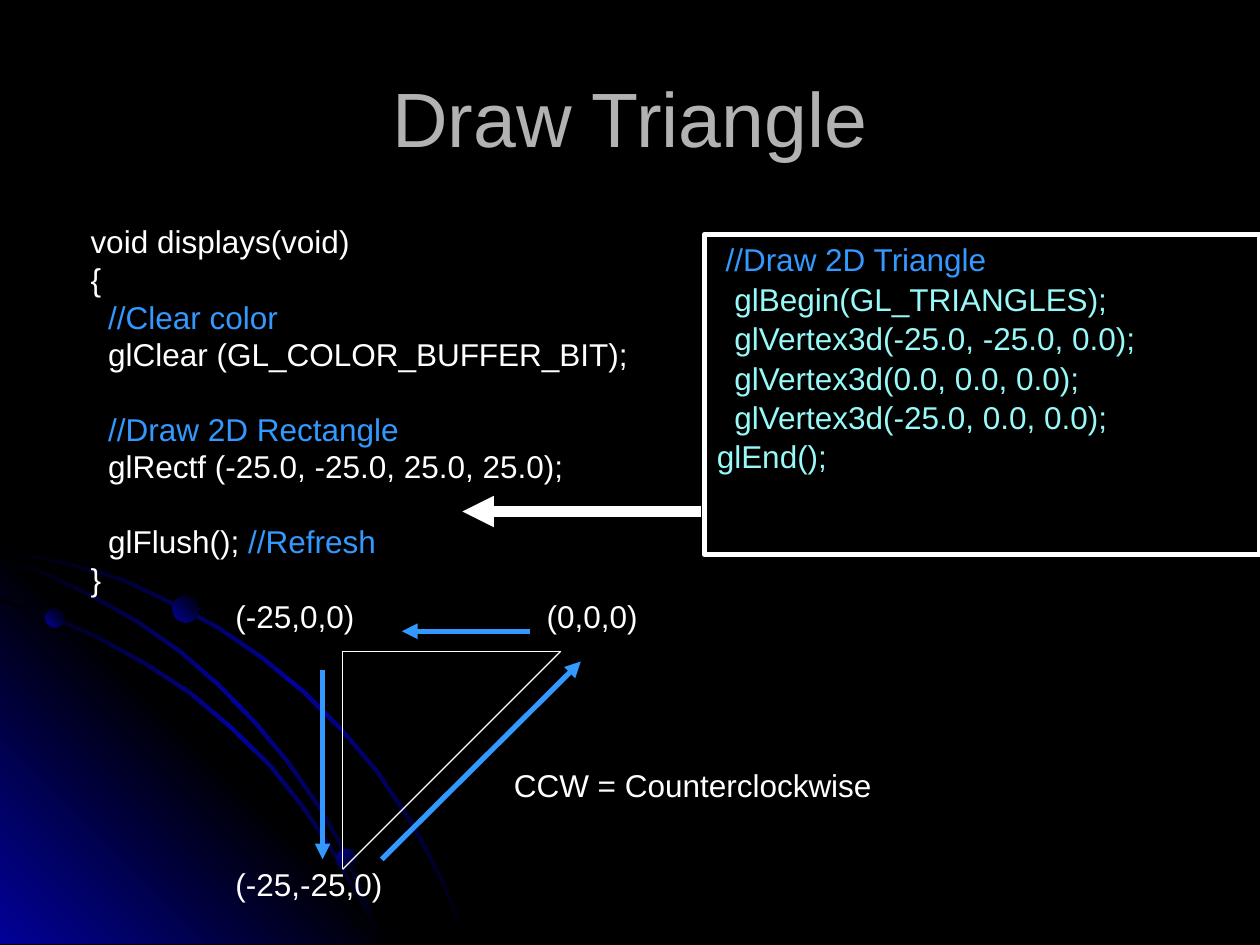
import copy

from lxml import etree
from pptx import Presentation
from pptx import util as u
from pptx.dml.color import RGBColor
from pptx.enum import shapes, text
from pptx.oxml.ns import qn

COLUMNS, ROWS = 100, 75
COLORS = {
    "black": "000000", "navy": "010199", "white": "FFFFFF",
    "title": "B2B2B2", "comment": "3399FF", "code": "97F9F8",
}
GLOW = ("black", "navy", "black")
SPACE_WIDTH = 0.7  # columns taken by one space of 18 pt code


class SlideBuilder:
    def __init__(self, presentation):
        self.unit = presentation.slide_width / COLUMNS
        self.font, self.size = "Arial", 18
        self.slide = presentation.slides.add_slide(presentation.slide_layouts[6])
        self.fill(self.slide.background.fill, "black")

    def grid(self, *lengths):
        return [u.Emu(round(length * self.unit)) for length in lengths]

    def color(self, name):
        return RGBColor.from_string(COLORS[name])

    def fill(self, fill, name):
        fill.solid()
        fill.fore_color.rgb = self.color(name)

    def gradient(self, shape, names, angle):
        """Spread the named colours evenly; the angle runs counterclockwise."""
        shape.shadow.inherit = False
        shape.line.fill.background()
        shape.fill.gradient()
        shape.fill.gradient_angle = angle
        stops = shape._element.spPr.find(qn("a:gradFill")).find(qn("a:gsLst"))
        for _ in names[2:]:
            stops.append(copy.deepcopy(stops[-1]))
        for index, (stop, name) in enumerate(zip(shape.fill.gradient_stops, names)):
            stop.position = index / (len(names) - 1)
            stop.color.rgb = self.color(name)

    def polygon(self, points, names, angle):
        start, *rest = [self.grid(*point) for point in points]
        builder = self.slide.shapes.build_freeform(*start, scale=1.0)
        builder.add_line_segments(rest, close=True)
        self.gradient(builder.convert_to_shape(), names, angle)

    def orbit(self, edge):
        """Draw a thin glowing band along the inner side of an edge."""
        inner = [(max(x - 0.2, 0), min(y + 0.2, ROWS)) for x, y in reversed(edge)]
        self.polygon(edge + inner, GLOW, 315)

    def planet(self, left, top, diameter, angle):
        shape = self.slide.shapes.add_shape(
            shapes.MSO_SHAPE.OVAL, *self.grid(left, top, diameter, diameter))
        self.gradient(shape, ("navy", "black"), angle)

    def set_lines(self, frame, lines, size=None, align=text.PP_ALIGN.LEFT,
                  spacing=1.0, before=0, gap=0):
        """Set lines of (spaces of indent, gap above, runs)."""
        frame.word_wrap = True
        for index, (indent, has_gap, runs) in enumerate(lines):
            paragraph = frame.add_paragraph() if index else frame.paragraphs[0]
            paragraph.alignment = align
            paragraph.line_spacing = spacing
            paragraph.space_before = u.Pt(before + gap * has_gap)
            paragraph.font.name = self.font
            paragraph.font.size = u.Pt(size or self.size)
            paragraph._p.get_or_add_pPr().set(
                "marL", str(int(self.grid(indent * SPACE_WIDTH)[0])))
            for content, color in runs:
                run = paragraph.add_run()
                run.text = content
                run.font.color.rgb = self.color(color)

    def text_box(self, box, lines, anchor=text.MSO_ANCHOR.TOP, **style):
        frame = self.slide.shapes.add_textbox(*self.grid(*box)).text_frame
        frame.vertical_anchor = anchor
        self.set_lines(frame, lines, **style)

    def label(self, left, top, width, content):
        self.text_box((left, top, width, 5), [(0, False, [(content, "white")])])

    def code_panel(self, box, lines, **style):
        shape = self.slide.shapes.add_shape(
            shapes.MSO_SHAPE.RECTANGLE, *self.grid(*box))
        shape.shadow.inherit = False
        shape.fill.background()
        shape.line.color.rgb = self.color("white")
        shape.line.width = u.Pt(3)
        shape.text_frame.vertical_anchor = text.MSO_ANCHOR.TOP
        self.set_lines(shape.text_frame, lines, **style)

    def line(self, start, end, color, width, arrow=False):
        connector = self.slide.shapes.add_connector(
            shapes.MSO_CONNECTOR.STRAIGHT, *self.grid(*start, *end))
        connector.line.color.rgb = self.color(color)
        connector.line.width = u.Pt(width)
        properties = connector._element.spPr
        if arrow:
            etree.SubElement(properties.find(qn("a:ln")),
                             qn("a:tailEnd"), type="triangle")
        etree.SubElement(properties, qn("a:effectLst"))


ORBITS = [
    [(0, 43.5), (5.7, 44.7), (9.8, 45.9), (13.6, 47.7), (17.4, 49.7),
     (20.9, 52.1), (24.2, 54.8), (27.2, 57.8), (30, 61.1), (32.5, 64.8),
     (33.9, 67.3), (35.2, 69.8), (36.2, 72.3), (37.2, 74.9)],
    [(0, 47.5), (4.1, 48.8), (7.9, 50.5), (11.7, 52.6), (15.2, 54.9),
     (18.4, 57.6), (21.5, 60.6), (24.2, 64), (26.6, 67.6), (28.6, 71.2),
     (29.6, 73), (30.3, 74.9)],
    [(0, 44.2), (3.9, 45.5), (7.6, 47.3), (11.1, 49.3), (14.4, 51.6),
     (17.5, 54.3), (20.4, 57.3), (22.9, 60.3), (25.4, 63.9), (26.9, 66.5),
     (28.2, 69.3), (29.4, 72), (30.3, 74.9)],
]
DISPLAY_CODE = [
    (0, False, [("void displays(void)", "white")]),
    (0, False, [("{", "white")]),
    (2, False, [("//Clear color", "comment")]),
    (2, False, [("glClear (GL_COLOR_BUFFER_BIT);", "white")]),
    (2, True, [("//Draw 2D Rectangle", "comment")]),
    (2, False, [("glRectf (-25.0, -25.0, 25.0, 25.0);", "white")]),
    (2, True, [("glFlush(); ", "white"), ("//Refresh", "comment")]),
    (0, False, [("}", "white")]),
]
TRIANGLE_CODE = [
    (1, False, [("//Draw 2D Triangle", "comment")]),
    (2, False, [("glBegin(GL_TRIANGLES);", "code")]),
    (2, False, [("glVertex3d(-25.0, -25.0, 0.0);", "code")]),
    (2, False, [("glVertex3d(0.0, 0.0, 0.0);", "code")]),
    (2, False, [("glVertex3d(-25.0, 0.0, 0.0);", "code")]),
    (0, False, [("glEnd();", "code")]),
]
CORNERS = [(27.2, 51.7), (44.5, 51.7), (27.2, 69)]
DIRECTIONS = [((30.3, 68.2), (46.1, 52.5)), ((25.6, 53.2), (25.6, 68.2)),
              ((42.1, 50.1), (31.9, 50.1))]


def main():
    presentation = Presentation()
    presentation.slide_width, presentation.slide_height = u.Inches(10), u.Inches(7.5)
    builder = SlideBuilder(presentation)

    first, *others = ORBITS
    builder.orbit(first)
    builder.polygon([(32.2, 74.9), (0, 74.9), (0, 42.7)], ("navy", "black", "navy"), 45)
    for edge in others:
        builder.orbit(edge)
    for planet in [(3.6, 48.3, 1.5, 45), (26.7, 67.4, 1.6, 315), (13.7, 47.3, 2.1, 45)]:
        builder.planet(*planet)

    builder.text_box((6.2, 17.7, 46.1, 50.5), DISPLAY_CODE,
                     spacing=0.8, before=4.3, gap=20.9)
    builder.text_box((5, 3, 90, 12.5), [(0, False, [("Draw Triangle", "title")])],
                     anchor=text.MSO_ANCHOR.MIDDLE, size=44,
                     align=text.PP_ALIGN.CENTER)
    builder.code_panel((55.9, 18.6, 44.1, 25.4), TRIANGLE_CODE, before=0.9)
    builder.line((55.6, 40.6), (36.7, 40.6), "white", 6, arrow=True)

    for index, corner in enumerate(CORNERS):
        builder.line(CORNERS[index - 1], corner, "white", 0.75)
    for start, end in DIRECTIONS:
        builder.line(start, end, "comment", 3, arrow=True)
    builder.label(17.7, 68.2, 16.5, "(-25,-25,0)")
    builder.label(17.7, 46.9, 13.7, "(-25,0,0)")
    builder.label(42.4, 46.9, 10.9, "(0,0,0)")
    builder.label(39.8, 60.3, 38, "CCW = Counterclockwise")
    presentation.save("out.pptx")


if __name__ == "__main__":
    main()
